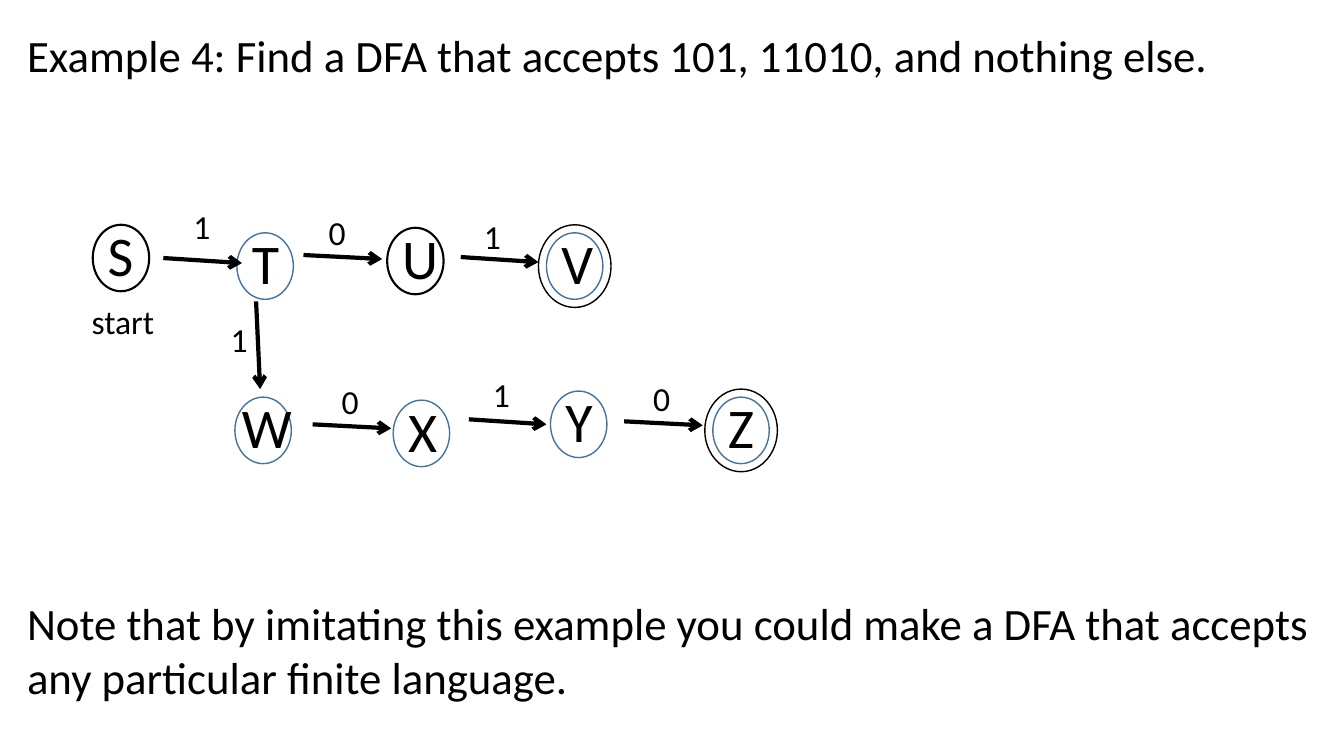
"""Build a slide with the state diagram of a DFA that accepts 101 and 11010."""
import pptx
import pptx.dml.color
import pptx.enum.shapes
import pptx.enum.text
import pptx.oxml
import pptx.oxml.ns
import pptx.util
from pptx.util import Inches

BLACK = pptx.dml.color.RGBColor(0x00, 0x00, 0x00)
BLUE = pptx.dml.color.RGBColor(0x43, 0x73, 0x9E)

OVAL_WIDTH, OVAL_HEIGHT = 0.56, 0.66
RING_GAP = 0.08

STATES = [
    ("S", 0.92, 2.23, BLACK, 1.5),
    ("T", 2.35, 2.31, BLUE, 1),
    ("U", 3.84, 2.26, BLACK, 1.5),
    ("V", 5.42, 2.31, BLUE, 1),
    ("W", 2.33, 3.94, BLUE, 1),
    ("X", 3.9, 3.97, BLUE, 1),
    ("Y", 5.46, 3.88, BLUE, 1),
    ("Z", 7.07, 3.94, BLUE, 1),
]
ACCEPTING = {"V", "Z"}
LETTER_SHIFT = {"W": -0.03}

TRANSITIONS = [
    ("1", (1.62, 2.56), (2.4, 2.61), (1.82, 1.99)),
    ("0", (3.01, 2.53), (3.79, 2.57), (3.16, 2.05)),
    ("1", (4.57, 2.55), (5.34, 2.6), (4.7, 2.09)),
    ("1", (2.54, 2.99), (2.58, 3.86), (2.19, 3.11)),
    ("0", (3.1, 4.21), (3.88, 4.25), (3.29, 3.73)),
    ("1", (4.65, 4.16), (5.42, 4.21), (4.79, 3.66)),
    ("0", (6.19, 4.18), (6.97, 4.22), (6.38, 3.7)),
]


def add_text(slide, text, left, top, width, height, size):
    """Add a wrapped text box in black Calibri."""
    box = slide.shapes.add_textbox(Inches(left), Inches(top), Inches(width), Inches(height))
    frame = box.text_frame
    frame.word_wrap = True
    frame.auto_size = pptx.enum.text.MSO_AUTO_SIZE.SHAPE_TO_FIT_TEXT
    paragraph = frame.paragraphs[0]
    paragraph.text = text
    paragraph.font.name = "Calibri"
    paragraph.font.size = pptx.util.Pt(size)
    paragraph.font.color.rgb = BLACK


def add_oval(slide, left, top, width, height, color, weight):
    """Add an unfilled, outlined ellipse."""
    oval = slide.shapes.add_shape(
        pptx.enum.shapes.MSO_SHAPE.OVAL, Inches(left), Inches(top), Inches(width), Inches(height))
    oval.shadow.inherit = False
    oval.fill.background()
    oval.line.color.rgb = color
    oval.line.width = pptx.util.Pt(weight)


def add_state(slide, name, left, top, color, weight):
    """Add a lettered state, with an outer ring when it is accepting."""
    add_oval(slide, left, top, OVAL_WIDTH, OVAL_HEIGHT, color, weight)
    add_text(slide, name, left + LETTER_SHIFT.get(name, 0.05), top - 0.09, 0.28, 0.77, 40)
    if name in ACCEPTING:
        add_oval(slide, left - RING_GAP, top - RING_GAP,
                 OVAL_WIDTH + 2 * RING_GAP, OVAL_HEIGHT + 2 * RING_GAP, BLACK, 1)


def add_transition(slide, symbol, start, end, label):
    """Add an arrow from start to end and the symbol it reads."""
    arrow = slide.shapes.add_connector(
        pptx.enum.shapes.MSO_CONNECTOR.STRAIGHT, *map(Inches, start + end))
    arrow.line.color.rgb = BLACK
    arrow.line.width = pptx.util.Pt(3)
    outline = arrow.line._get_or_add_ln()
    pptx.oxml.ns.qn("a:tailEnd")
    outline.append(pptx.oxml.parse_xml(
        f'<a:tailEnd {pptx.oxml.ns.nsdecls("a")} type="arrow"/>'))
    arrow._element.spPr.append(pptx.oxml.parse_xml(
        f'<a:effectLst {pptx.oxml.ns.nsdecls("a")}/>'))
    add_text(slide, symbol, *label, 0.31, 0.5, 24)


def main():
    """Build and save the slide."""
    presentation = pptx.Presentation()
    presentation.slide_width = Inches(13.33)
    presentation.slide_height = Inches(7.5)
    slide = presentation.slides.add_slide(presentation.slide_layouts[6])
    add_text(slide, "Example 4: Find a DFA that accepts 101, 11010, and nothing else.",
             0.17, 0.23, 12.17, 0.64, 32)
    for state in STATES:
        add_state(slide, *state)
    add_text(slide, "start", 0.81, 2.94, 1.06, 0.5, 24)
    for transition in TRANSITIONS:
        add_transition(slide, *transition)
    add_text(slide, "Note that by imitating this example you could make a DFA that accepts "
             "any particular finite language.", 0.17, 5.86, 13.16, 1.18, 32)
    presentation.save("out.pptx")


if __name__ == "__main__":
    main()
